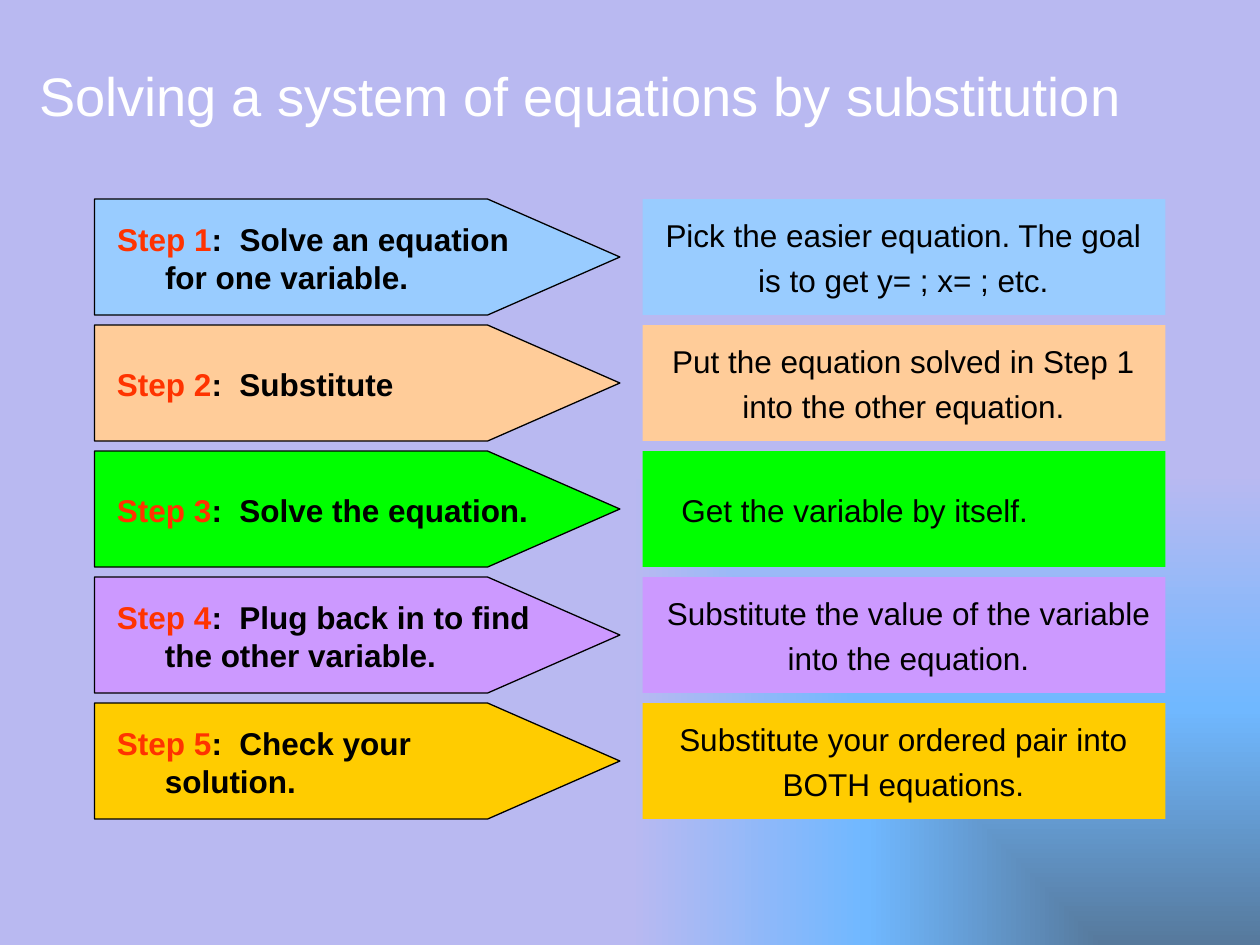
from dataclasses import dataclass

from pptx import Presentation
from pptx.dml.color import RGBColor
from pptx.enum.shapes import MSO_SHAPE as Shape
from pptx.enum.text import MSO_ANCHOR as Anchor, MSO_AUTO_SIZE as AutoSize, PP_ALIGN as Align
from pptx.oxml import parse_xml
from pptx.oxml.ns import nsdecls
from pptx.util import Inches, Pt


@dataclass(frozen=True)
class Theme:
    font: str = "Arial"
    title_size: float = 31
    text_size: float = 18
    title: str = "FFFFFF"
    ink: str = "000000"
    step: str = "FF3300"
    background: tuple = ((0, "56799C"), (50, "70B8FF"), (100, "B9B9F1"))


# panel colour, step instruction, explanation lines
STEPS = [
    ("99CCFF", "Solve an equation for one variable.",
     ["Pick the easier equation. The goal", "is to get y= ; x= ; etc."]),
    ("FFCC99", "Substitute",
     ["Put the equation solved in Step 1", "into the other equation."]),
    ("00FF00", "Solve the equation.", ["Get the variable by itself."]),
    ("CC99FF", "Plug back in to find the other variable.",
     ["Substitute the value of the variable", "into the equation."]),
    ("FFCC00", "Check your solution.",
     ["Substitute your ordered pair into", "BOTH equations."]),
]
FIRST_TOP, PITCH, PANEL_HEIGHT = 1.58, 1, 0.92
TEXT_INSET, TEXT_HEIGHT = 0.09, 0.75
HANGING = 0.38


def add_run(paragraph, text, *, font, size, color, bold=False):
    run = paragraph.add_run()
    run.text = text
    run.font.name = font
    run.font.size = Pt(size)
    run.font.bold = bold
    run.font.color.rgb = RGBColor.from_string(color)


class SlideBuilder:
    def __init__(self, slide, theme):
        self.slide, self.theme = slide, theme

    def background(self):
        """Fill with a rectangular gradient centred on the bottom right corner."""
        stops = "".join(
            f'<a:gs pos="{pos * 1000}"><a:srgbClr val="{color}"/></a:gs>'
            for pos, color in self.theme.background)
        self.slide._element.cSld.insert(0, parse_xml(
            f'<p:bg {nsdecls("p", "a")}><p:bgPr><a:gradFill rotWithShape="0">'
            f'<a:gsLst>{stops}</a:gsLst><a:path path="rect">'
            '<a:fillToRect l="100000" t="100000"/></a:path></a:gradFill>'
            '<a:effectLst/></p:bgPr></p:bg>'))

    def panel(self, kind, box, fill, line=None):
        panel = self.slide.shapes.add_shape(kind, *map(Inches, box))
        panel.shadow.inherit = False
        panel.fill.solid()
        panel.fill.fore_color.rgb = RGBColor.from_string(fill)
        if line:
            panel.line.color.rgb = RGBColor.from_string(line)
            panel.line.width = Pt(0.75)
        else:
            panel.line.fill.background()
        return panel

    def text(self, box, paragraphs, *, placeholder=None, size=None, align=Align.LEFT,
             hanging=HANGING, first_line=-HANGING, space_before=0):
        """Write paragraphs, each a list of (text, colour, bold), above all earlier shapes."""
        shapes = self.slide.shapes
        holder = placeholder or shapes.add_textbox(0, 0, 0, 0)
        if placeholder:
            shapes._spTree.append(holder._element)
        holder.left, holder.top, holder.width, holder.height = map(Inches, box)
        frame = holder.text_frame
        frame.word_wrap = True
        frame.auto_size = AutoSize.NONE
        frame.vertical_anchor = Anchor.MIDDLE
        for index, runs in enumerate(paragraphs):
            paragraph = frame.add_paragraph() if index else frame.paragraphs[0]
            paragraph.alignment = align
            paragraph.space_before = Pt(space_before)
            properties = paragraph._p.get_or_add_pPr()
            properties.set("marL", str(Inches(hanging)))
            properties.set("indent", str(Inches(first_line)))
            properties.append(parse_xml(f'<a:buNone {nsdecls("a")}/>'))
            for words, color, bold in runs:
                add_run(paragraph, words, font=self.theme.font,
                        size=size or self.theme.text_size, color=color, bold=bold)

    def title(self, words):
        self.text((0.21, 0.25, 9.04, 1), [[(words, self.theme.title, False)]],
                  placeholder=self.slide.shapes.title, size=self.theme.title_size,
                  hanging=0, first_line=0)

    def step(self, number, top, color, instruction, explanation, placeholder=None):
        theme = self.theme
        arrow = self.panel(Shape.PENTAGON, (0.75, top, 4.17, PANEL_HEIGHT), color, theme.ink)
        arrow.adjustments[0] = 1.14
        self.panel(Shape.RECTANGLE, (5.1, top, 4.15, PANEL_HEIGHT), color)
        text_top = top + TEXT_INSET
        self.text((0.83, text_top, 3.58, TEXT_HEIGHT),
                  [[(f"Step {number}", theme.step, True),
                    (f":  {instruction}", theme.ink, True)]],
                  placeholder=placeholder)
        single = len(explanation) == 1
        self.text((5.17, text_top, 4.08 if number == 4 else 4, TEXT_HEIGHT),
                  [[(line, theme.ink, False)] for line in explanation],
                  align=Align.LEFT if single else Align.CENTER,
                  first_line=-0.24 if single else -HANGING, space_before=4)


def main():
    deck = Presentation()
    deck.slide_width, deck.slide_height = Inches(10), Inches(7.5)
    slide = deck.slides.add_slide(deck.slide_layouts[1])
    builder = SlideBuilder(slide, Theme())
    first_step = slide.placeholders[1]
    builder.background()
    builder.title("Solving a system of equations by substitution")
    for index, (color, instruction, explanation) in enumerate(STEPS):
        builder.step(index + 1, FIRST_TOP + index * PITCH, color, instruction, explanation,
                     placeholder=None if index else first_step)
    deck.save("out.pptx")


if __name__ == "__main__":
    main()
